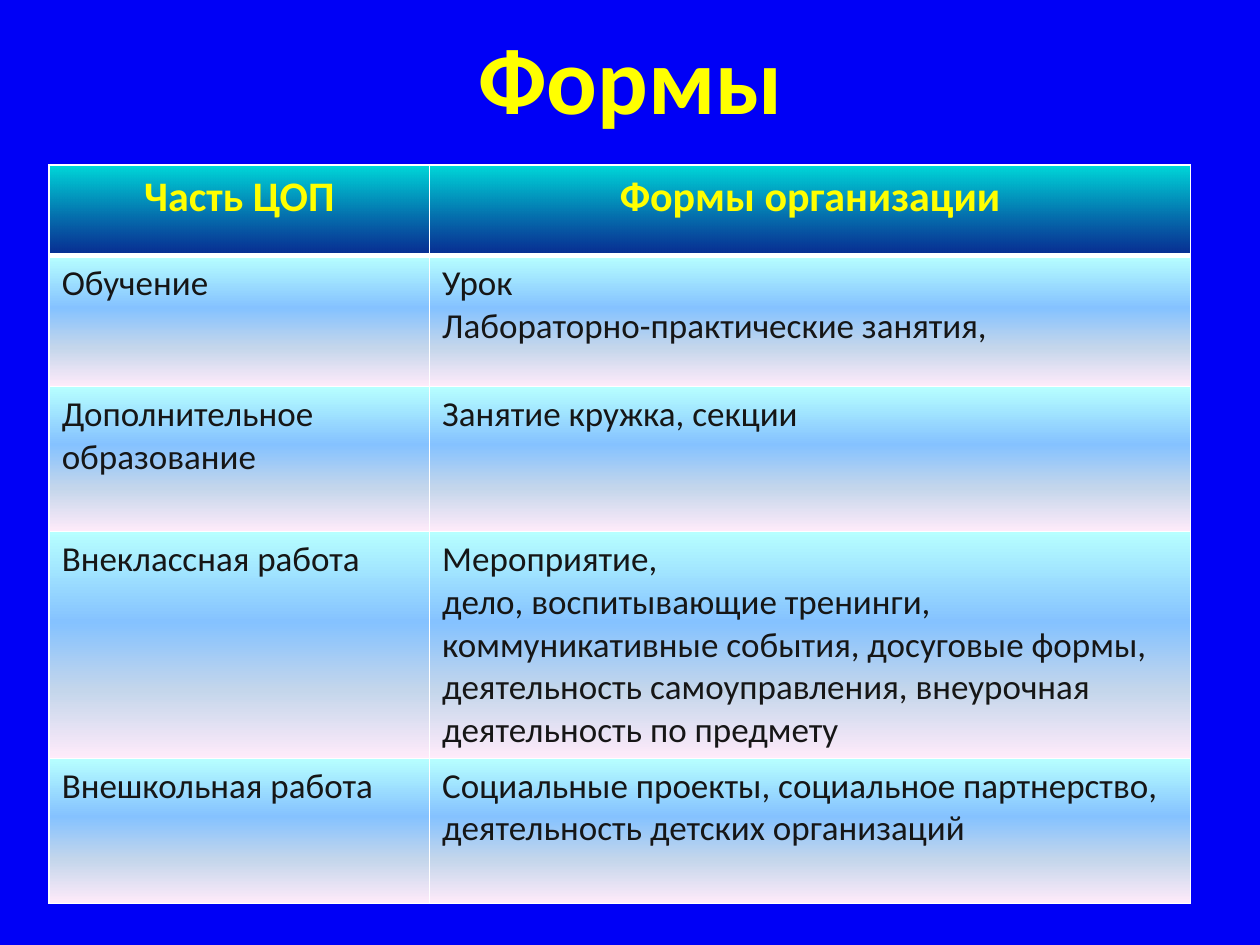
from lxml import etree
from pptx import Presentation
from pptx.dml.color import RGBColor
from pptx.enum.text import MSO_ANCHOR, PP_ALIGN
from pptx.oxml.ns import qn
from pptx.util import Inches, Pt

BLUE = RGBColor(0x00, 0x00, 0xF6)
YELLOW = RGBColor(0xFF, 0xFF, 0x00)
WHITE = RGBColor(0xFF, 0xFF, 0xFF)
INK = RGBColor(0x16, 0x16, 0x16)
TEAL = RGBColor(0x00, 0xDB, 0xDB)
NAVY = RGBColor(0x0B, 0x32, 0x80)
AQUA = RGBColor(0xB7, 0xFF, 0xFF)
SKY = RGBColor(0x85, 0xC2, 0xFF)
MIST = RGBColor(0xC4, 0xD6, 0xEB)
PINK = RGBColor(0xFF, 0xEB, 0xFA)

# Gradient stops: position %, colour, opacity %
HEADER_STOPS = [(0, TEAL, 100), (100, NAVY, 85)]
BODY_STOPS = [(0, AQUA, 100), (40, SKY, 100), (70, MIST, 100), (100, PINK, 100)]

COLUMN_WIDTHS = [3.02, 6.04]
ROW_HEIGHTS = [0.72, 1.04, 1.15, 1.8, 1.15]
ROWS = [
    ("Часть ЦОП", "Формы организации"),
    ("Обучение", "Урок\nЛабораторно-практические занятия,"),
    ("Дополнительное образование", "Занятие кружка, секции"),
    ("Внеклассная работа",
     "Мероприятие,\nдело, воспитывающие тренинги, коммуникативные события, "
     "досуговые формы, деятельность самоуправления, внеурочная "
     "деятельность по предмету"),
    ("Внешкольная работа",
     "Социальные проекты, социальное партнерство, "
     "деятельность детских организаций"),
]


def add_color(parent, color, opacity=100):
    element = etree.SubElement(parent, qn("a:srgbClr"), val=str(color))
    if opacity < 100:
        etree.SubElement(element, qn("a:alpha"), val=str(opacity * 1000))


class SlideBuilder:
    font_name = "Calibri"

    def __init__(self, slide):
        self.slide = slide

    def background(self, color):
        fill = self.slide.background.fill
        fill.solid()
        fill.fore_color.rgb = color

    def set_text(self, frame, text, size, color, bold=False, align=PP_ALIGN.LEFT):
        frame.text = text
        frame.word_wrap = True
        for paragraph in frame.paragraphs:
            paragraph.alignment = align
            font = paragraph.font
            font.name, font.size, font.bold = self.font_name, Pt(size), bold
            font.color.rgb = color

    def title(self, text, left, top, width, height):
        box = self.slide.shapes.add_textbox(
            Inches(left), Inches(top), Inches(width), Inches(height))
        frame = box.text_frame
        frame.vertical_anchor = MSO_ANCHOR.MIDDLE
        frame.margin_left = frame.margin_right = Inches(0.04)
        frame.margin_top = frame.margin_bottom = Inches(0.04)
        self.set_text(frame, text, 54, YELLOW, True, PP_ALIGN.CENTER)

    def style_cell(self, cell, stops, top, bottom):
        # Borders come before the fill in the cell properties
        properties = cell._tc.get_or_add_tcPr()
        for side, width in (("L", 1), ("R", 1), ("T", top), ("B", bottom)):
            line = etree.SubElement(properties, qn(f"a:ln{side}"), w=str(Pt(width)))
            add_color(etree.SubElement(line, qn("a:solidFill")), WHITE)
        gradient = etree.SubElement(properties, qn("a:gradFill"), rotWithShape="1")
        stop_list = etree.SubElement(gradient, qn("a:gsLst"))
        for position, color, opacity in stops:
            stop = etree.SubElement(stop_list, qn("a:gs"), pos=str(position * 1000))
            add_color(stop, color, opacity)
        etree.SubElement(gradient, qn("a:lin"), ang=str(90 * 60000), scaled="1")

    def table(self, rows, left, top, widths, heights):
        table = self.slide.shapes.add_table(
            len(rows), len(widths), Inches(left), Inches(top),
            Inches(sum(widths)), Inches(sum(heights))).table
        table.horz_banding = False
        for column, width in zip(table.columns, widths):
            column.width = Inches(width)
        for index, (row, height, texts) in enumerate(zip(table.rows, heights, rows)):
            row.height = Inches(height)
            for cell, text in zip(row.cells, texts):
                if index == 0:
                    self.set_text(cell.text_frame, text, 24, YELLOW, True, PP_ALIGN.CENTER)
                    self.style_cell(cell, HEADER_STOPS, 1, 3)
                else:
                    self.set_text(cell.text_frame, text, 20, INK)
                    self.style_cell(cell, BODY_STOPS, 3 if index == 1 else 1, 1)


def main():
    presentation = Presentation()
    presentation.slide_width = Inches(10)
    presentation.slide_height = Inches(7.5)
    builder = SlideBuilder(presentation.slides.add_slide(presentation.slide_layouts[6]))

    builder.background(BLUE)
    builder.title("Формы", 0.98, 0.2, 8.05, 0.82)
    builder.table(ROWS, 0.39, 1.31, COLUMN_WIDTHS, ROW_HEIGHTS)

    presentation.save("out.pptx")


if __name__ == "__main__":
    main()
